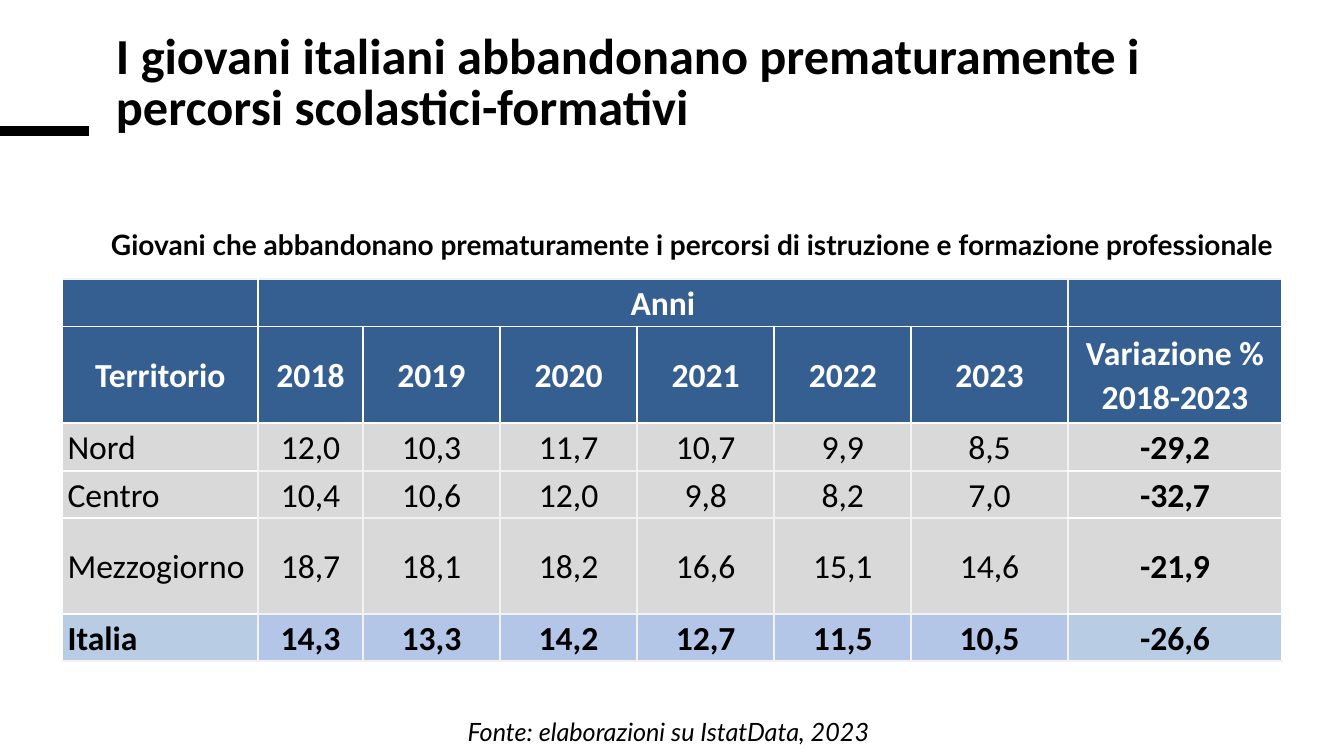
from dataclasses import dataclass

from lxml import etree
from pptx import Presentation
from pptx.dml.color import RGBColor
from pptx.enum.shapes import MSO_CONNECTOR
from pptx.enum.text import MSO_ANCHOR, MSO_AUTO_SIZE, PP_ALIGN
from pptx.oxml.ns import qn
from pptx.util import Inches, Pt

STRAIGHT = MSO_CONNECTOR.STRAIGHT
TOP, MIDDLE = MSO_ANCHOR.TOP, MSO_ANCHOR.MIDDLE
LEFT, CENTER = PP_ALIGN.LEFT, PP_ALIGN.CENTER
NO_FIT, GROW = MSO_AUTO_SIZE.NONE, MSO_AUTO_SIZE.SHAPE_TO_FIT_TEXT


@dataclass(frozen=True)
class Theme:
    """Fonts, colours and type sizes of the slide."""
    main_font: str = "Calibri"
    label_font: str = "Lato"
    black: str = "000000"
    white: str = "FFFFFF"
    header: str = "365F91"
    body: str = "D9D9D9"
    total: str = "B4C6E7"
    total_edge: str = "B8CCE4"
    grid: str = "F2F2F2"
    title_size: int = 36
    table_size: int = 24
    caption_size: int = 20
    source_size: int = 18
    grid_width: float = 1.5
    accent_width: float = 6.75


THEME = Theme()
COLUMN_WIDTHS = [1.94, 1.04, 1.36, 1.36, 1.36, 1.36, 1.55, 2.13]
ROW_HEIGHTS = [0.47, 0.96, 0.47, 0.47, 0.95, 0.47]
LAST_COLUMN, LAST_ROW = len(COLUMN_WIDTHS) - 1, len(ROW_HEIGHTS) - 1
HEADER_ROWS = 2
ROWS = [
    ["", "Anni", "", "", "", "", "", ""],
    ["Territorio", "2018", "2019", "2020", "2021", "2022", "2023", "Variazione % 2018-2023"],
    ["Nord", "12,0", "10,3", "11,7", "10,7", "9,9", "8,5", "-29,2"],
    ["Centro", "10,4", "10,6", "12,0", "9,8", "8,2", "7,0", "-32,7"],
    ["Mezzogiorno", "18,7", "18,1", "18,2", "16,6", "15,1", "14,6", "-21,9"],
    ["Italia", "14,3", "13,3", "14,2", "12,7", "11,5", "10,5", "-26,6"],
]


def write(frame, text, font, size, color, align, bold=False, italic=False):
    """Put one formatted run in the first paragraph and return the paragraph."""
    para = frame.paragraphs[0]
    para.alignment = align
    span = para.add_run()
    span.text = text
    span.font.name = font
    span.font.size = Pt(size)
    span.font.bold = bold
    span.font.italic = italic
    span.font.color.rgb = RGBColor.from_string(color)
    return para


def add_title(page, text):
    """Place and format the title placeholder."""
    title = page.shapes.title
    title.left, title.top = Inches(1.05), Inches(0.28)
    title.width, title.height = Inches(11.51), Inches(1.42)
    frame = title.text_frame
    frame.word_wrap = True
    frame.auto_size = NO_FIT
    frame.vertical_anchor = TOP
    para = write(frame, text, THEME.main_font, THEME.title_size, THEME.black, LEFT, bold=True)
    para.line_spacing = 0.85
    para.space_after = Pt(6)


def add_label(page, text, left, top, width, height, size, anchor=TOP, **style):
    """Add a centred text box."""
    box = page.shapes.add_textbox(Inches(left), Inches(top), Inches(width), Inches(height))
    frame = box.text_frame
    frame.word_wrap = True
    frame.auto_size = GROW
    frame.vertical_anchor = anchor
    write(frame, text, THEME.label_font, size, THEME.black, CENTER, **style)


def add_accent(page):
    """Draw the thick rule at the left edge of the page."""
    rule = page.shapes.add_connector(STRAIGHT, 0, Inches(1.3), Inches(0.88), Inches(1.3))
    rule.line.color.rgb = RGBColor.from_string(THEME.black)
    rule.line.width = Pt(THEME.accent_width)
    etree.SubElement(rule._element.spPr, qn("a:effectLst"))


def vertical_color(row, edge):
    """Give the colour of a vertical grid line."""
    outer = edge in (0, LAST_COLUMN + 1)
    in_header = row < HEADER_ROWS and edge != LAST_COLUMN
    return THEME.white if outer or in_header else THEME.grid


def horizontal_color(edge, column):
    """Give the colour of a horizontal grid line."""
    inner = 0 < edge <= LAST_ROW
    white = inner and (edge <= HEADER_ROWS or column in (0, LAST_COLUMN))
    return THEME.white if white else THEME.grid


def set_borders(cell, row, column):
    """Draw the four borders of a cell before its fill is set."""
    span = cell.span_width if cell.is_merge_origin else 1
    borders = {
        "a:lnL": vertical_color(row, column),
        "a:lnR": vertical_color(row, column + span),
        "a:lnT": horizontal_color(row, column),
        "a:lnB": horizontal_color(row + 1, column),
    }
    properties = cell._tc.get_or_add_tcPr()
    for tag, color in borders.items():
        line = etree.SubElement(properties, qn(tag), w=str(Pt(THEME.grid_width)))
        fill = etree.SubElement(line, qn("a:solidFill"))
        etree.SubElement(fill, qn("a:srgbClr"), val=color)


def fill_color(row, column):
    """Give the fill of a cell."""
    if row < HEADER_ROWS:
        return THEME.header
    if row < LAST_ROW:
        return THEME.body
    return THEME.total_edge if column in (0, LAST_COLUMN) else THEME.total


def format_cell(cell, row, column, text):
    """Set the margins, borders, fill and text of a cell."""
    cell.margin_left = cell.margin_right = Inches(0.05)
    cell.margin_top = cell.margin_bottom = 0
    cell.vertical_anchor = MIDDLE
    set_borders(cell, row, column)
    cell.fill.solid()
    cell.fill.fore_color.rgb = RGBColor.from_string(fill_color(row, column))
    if text:
        in_header = row < HEADER_ROWS
        para = write(
            cell.text_frame, text, THEME.main_font, THEME.table_size,
            THEME.white if in_header else THEME.black,
            LEFT if column == 0 and not in_header else CENTER,
            bold=in_header or row == LAST_ROW or column == LAST_COLUMN,
        )
        para.line_spacing = 1.07


def add_dropout_table(page):
    """Add the table of early leavers by area and year."""
    table = page.shapes.add_table(
        len(ROW_HEIGHTS), len(COLUMN_WIDTHS), Inches(0.62), Inches(2.77),
        Inches(sum(COLUMN_WIDTHS)), Inches(sum(ROW_HEIGHTS)),
    ).table
    table.first_row = table.horz_banding = False
    for column, width in zip(table.columns, COLUMN_WIDTHS):
        column.width = Inches(width)
    for row, height in zip(table.rows, ROW_HEIGHTS):
        row.height = Inches(height)
    table.cell(0, 1).merge(table.cell(0, LAST_COLUMN - 1))
    for row, texts in enumerate(ROWS):
        for column, text in enumerate(texts):
            cell = table.cell(row, column)
            if not cell.is_spanned:
                format_cell(cell, row, column, text)


def main():
    """Build and save the deck."""
    deck = Presentation()
    deck.slide_width, deck.slide_height = Inches(13.33), Inches(7.5)
    page = deck.slides.add_slide(deck.slide_layouts.get_by_name("Title Only"))
    add_accent(page)
    add_title(page, "I giovani italiani abbandonano prematuramente i percorsi scolastici-formativi")
    add_dropout_table(page)
    add_label(
        page,
        "Giovani che abbandonano prematuramente i percorsi di istruzione e formazione professionale",
        -0.4, 2.2, 14.53, 0.44, THEME.caption_size, MIDDLE, bold=True,
    )
    add_label(
        page, "Fonte: elaborazioni su IstatData, 2023",
        4.19, 7.06, 4.88, 0.4, THEME.source_size, italic=True,
    )
    deck.save("out.pptx")


if __name__ == "__main__":
    main()
